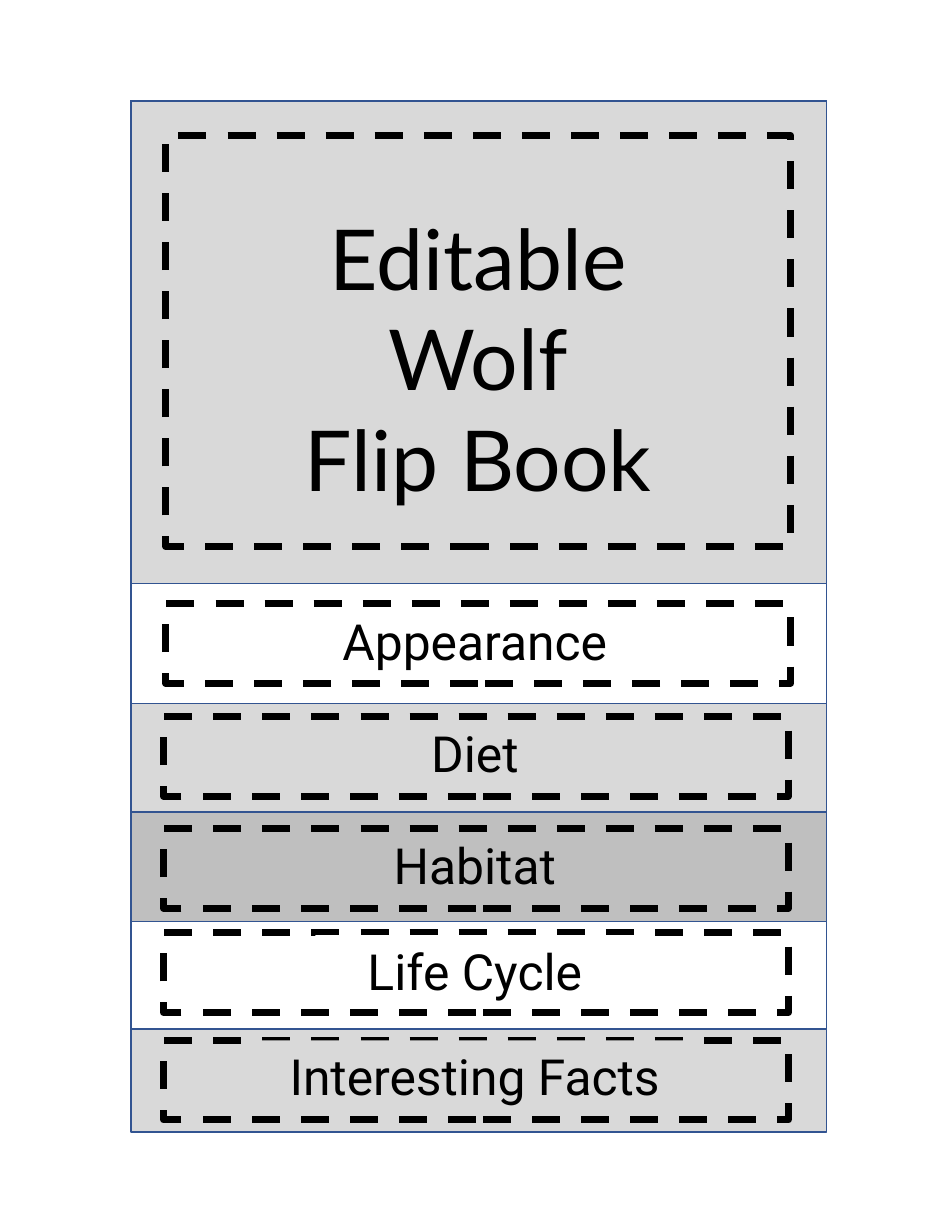
"""Build a flip book template with a cover and five stepped, labelled pages."""
from pptx import Presentation
from pptx.dml.color import RGBColor
from pptx.enum.dml import MSO_LINE
from pptx.enum.shapes import MSO_SHAPE
from pptx.enum.text import MSO_ANCHOR, MSO_AUTO_SIZE, PP_ALIGN
from pptx.util import Inches, Pt

BLACK = RGBColor(0x00, 0x00, 0x00)
WHITE = RGBColor(0xFF, 0xFF, 0xFF)
LIGHT = RGBColor(0xD9, 0xD9, 0xD9)
GRAY = RGBColor(0xBF, 0xBF, 0xBF)
BLUE = RGBColor(0x32, 0x54, 0x91)


def add_rect(left, top, width, height, fill, line, weight):
    sp = s.shapes.add_shape(MSO_SHAPE.RECTANGLE, Inches(left), Inches(top),
                            Inches(width), Inches(height))
    sp.shadow.inherit = False
    if fill is None:
        sp.fill.background()
    else:
        sp.fill.solid()
        sp.fill.fore_color.rgb = fill
    sp.line.color.rgb = line
    sp.line.width = Pt(weight)
    return sp


def write(sp, lines, font, size):
    tf = sp.text_frame
    tf.word_wrap = True
    tf.auto_size = MSO_AUTO_SIZE.SHAPE_TO_FIT_TEXT
    tf.vertical_anchor = MSO_ANCHOR.TOP
    for i, line in enumerate(lines):
        p = tf.add_paragraph() if i else tf.paragraphs[0]
        p.alignment = PP_ALIGN.CENTER
        r = p.add_run()
        r.text = line
        r.font.name = font
        r.font.size = Pt(size)
        r.font.color.rgb = BLACK


prs = Presentation()
prs.slide_width = Inches(8.5)
prs.slide_height = Inches(11)
s = prs.slides.add_slide(prs.slide_layouts[5])

pages = [
    ("Interesting Facts", 9.21, LIGHT, 1.46, 9.29, 9.29, 3.83, True),
    ("Life Cycle", 8.29, WHITE, 1.46, 8.33, 8.35, 2.85, True),
    ("Habitat", 7.33, GRAY, 1.46, 7.4, 7.4, 2.85, False),
    ("Diet", 6.35, LIGHT, 1.46, 6.4, 6.4, 2.85, False),
    ("Appearance", 5.38, WHITE, 1.48, 5.39, 5.4, 2.85, False),
]
for label, height, color, left, top, label_top, label_width, filled in pages:
    fill = color if filled else None
    add_rect(1.17, 0.9, 6.21, height, color, BLUE, 1)
    frame = add_rect(left, top, 5.58, 0.71, fill, BLACK, 4.5)
    frame.line.dash_style = MSO_LINE.DASH
    tb = s.shapes.add_textbox(Inches(4.24 - label_width / 2), Inches(label_top),
                              Inches(label_width), Inches(0.64))
    if filled:
        tb.fill.solid()
        tb.fill.fore_color.rgb = color
    write(tb, [label], "Roboto", 32)

add_rect(1.17, 0.9, 6.21, 4.31, LIGHT, BLUE, 1)
frame = add_rect(1.48, 1.21, 5.58, 3.67, None, BLACK, 4.5)
frame.line.dash_style = MSO_LINE.DASH

title = s.shapes.title
title.left, title.top = Inches(1.99), Inches(1.79)
title.width, title.height = Inches(4.56), Inches(2.83)
write(title, ["Editable Wolf", "Flip Book"], "Lato", 54)
s.shapes._spTree.append(title._element)

prs.save("out.pptx")
